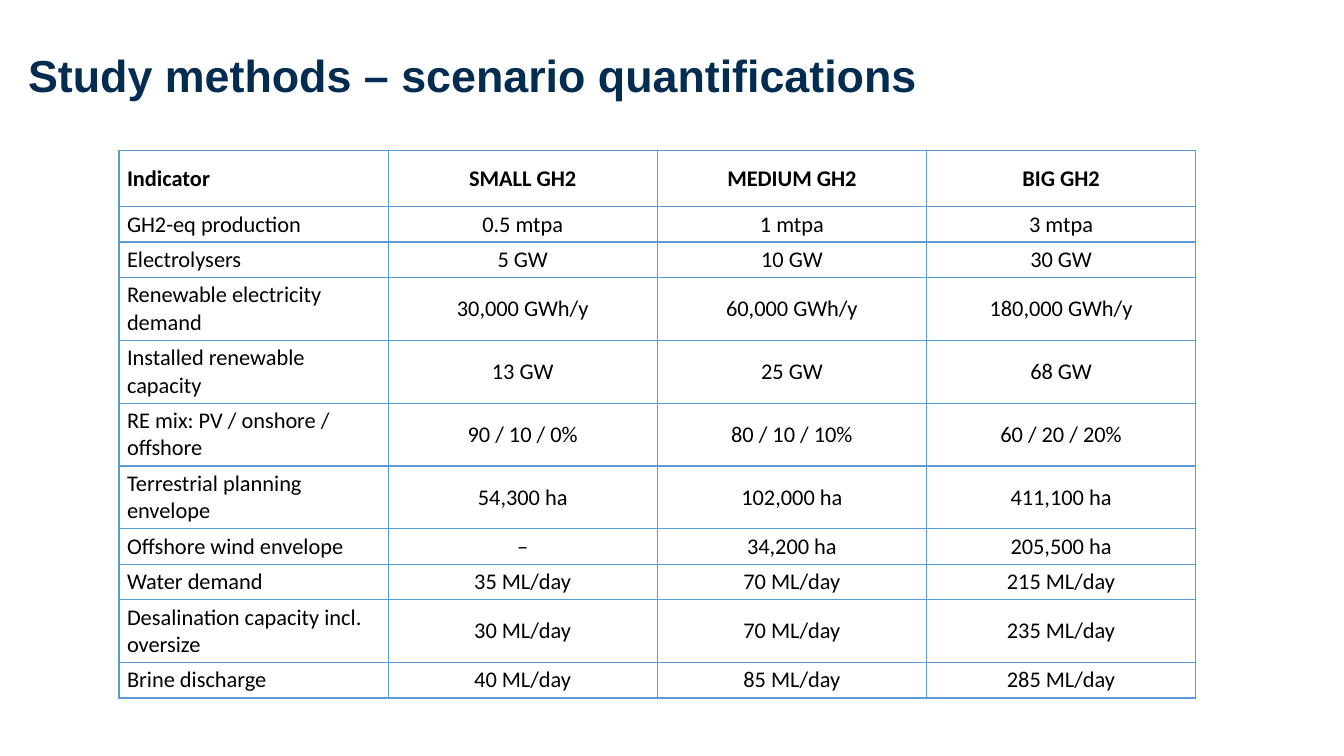
from dataclasses import dataclass

from lxml.etree import SubElement
from pptx import Presentation
from pptx.dml.color import RGBColor
from pptx.enum.text import MSO_ANCHOR as Anchor, PP_ALIGN as Align
from pptx.oxml.ns import qn
from pptx.slide import Slide
from pptx.table import _Cell as Cell
from pptx.text.text import _Paragraph as Paragraph
from pptx.util import Emu, Pt

EMU_PER_PX = 9144


@dataclass(frozen=True)
class Theme:
    title_color: str = "032C50"
    text_color: str = "000000"
    border_color: str = "5B9BD5"
    title_font: str = "Arial"
    table_font: str = "Calibri"
    title_size: int = 32
    table_size: int = 16
    border_width: int = 1


@dataclass(frozen=True)
class IndicatorRow:
    label: str
    small: str
    medium: str
    big: str
    height: int = 35
    bold: bool = False

    def texts(self) -> tuple[str, ...]:
        return self.label, self.small, self.medium, self.big


THEME = Theme()
HEADER, TWO_LINES = 56, 62
COLUMN_WIDTH = 267

ROWS = [
    IndicatorRow("Indicator", "SMALL GH2", "MEDIUM GH2", "BIG GH2", HEADER, True),
    IndicatorRow("GH2-eq production", "0.5 mtpa", "1 mtpa", "3 mtpa"),
    IndicatorRow("Electrolysers", "5 GW", "10 GW", "30 GW"),
    IndicatorRow("Renewable electricity demand", "30,000 GWh/y", "60,000 GWh/y",
                 "180,000 GWh/y", TWO_LINES),
    IndicatorRow("Installed renewable capacity", "13 GW", "25 GW", "68 GW", TWO_LINES),
    IndicatorRow("RE mix: PV / onshore / offshore", "90 / 10 / 0%", "80 / 10 / 10%",
                 "60 / 20 / 20%", TWO_LINES),
    IndicatorRow("Terrestrial planning envelope", "54,300 ha", "102,000 ha",
                 "411,100 ha", TWO_LINES),
    IndicatorRow("Offshore wind envelope", "–", "34,200 ha", "205,500 ha"),
    IndicatorRow("Water demand", "35 ML/day", "70 ML/day", "215 ML/day"),
    IndicatorRow("Desalination capacity incl. oversize", "30 ML/day", "70 ML/day",
                 "235 ML/day", TWO_LINES),
    IndicatorRow("Brine discharge", "40 ML/day", "85 ML/day", "285 ML/day"),
]


def px(length: int) -> Emu:
    return Emu(length * EMU_PER_PX)


def add_run(paragraph: Paragraph, text: str, font: str, size: int,
            color: str, bold: bool) -> None:
    run = paragraph.add_run()
    run.text = text
    run.font.name = font
    run.font.size = Pt(size)
    run.font.bold = bold
    run.font.color.rgb = RGBColor.from_string(color)


def add_title(slide: Slide, text: str) -> None:
    frame = slide.shapes.add_textbox(px(18), px(24), px(1200), px(106)).text_frame
    frame.word_wrap = True
    frame.vertical_anchor = Anchor.MIDDLE
    paragraph = frame.paragraphs[0]
    paragraph.line_spacing = 0.9
    add_run(paragraph, text, THEME.title_font, THEME.title_size, THEME.title_color, True)


def add_borders(cell: Cell) -> None:
    properties = cell._tc.get_or_add_tcPr()
    for side in ("lnL", "lnR", "lnT", "lnB"):
        line = SubElement(properties, qn(f"a:{side}"), w=str(Pt(THEME.border_width)))
        fill = SubElement(line, qn("a:solidFill"))
        SubElement(fill, qn("a:srgbClr"), val=THEME.border_color)


def fill_cell(cell: Cell, text: str, align: Align, bold: bool) -> None:
    cell.vertical_anchor = Anchor.MIDDLE
    cell.margin_left = cell.margin_right = px(8)
    cell.margin_top = cell.margin_bottom = px(4)
    add_borders(cell)
    cell.fill.background()
    paragraph = cell.text_frame.paragraphs[0]
    paragraph.alignment = align
    add_run(paragraph, text, THEME.table_font, THEME.table_size, THEME.text_color, bold)


def add_scenario_table(slide: Slide, rows: list[IndicatorRow]) -> None:
    column_count = len(rows[0].texts())
    table = slide.shapes.add_table(
        len(rows), column_count, px(118), px(149),
        px(COLUMN_WIDTH * column_count), px(sum(row.height for row in rows))).table
    table.first_row = table.horz_banding = False
    for column in table.columns:
        column.width = px(COLUMN_WIDTH)
    for row_index, row in enumerate(rows):
        table.rows[row_index].height = px(row.height)
        for column_index, text in enumerate(row.texts()):
            align = Align.CENTER if column_index else Align.LEFT
            fill_cell(table.cell(row_index, column_index), text, align, row.bold)


def main() -> None:
    presentation = Presentation()
    presentation.slide_width, presentation.slide_height = px(1333), px(750)
    slide = presentation.slides.add_slide(presentation.slide_layouts[6])
    add_scenario_table(slide, ROWS)
    add_title(slide, "Study methods – scenario quantifications")
    presentation.save("out.pptx")


if __name__ == "__main__":
    main()
